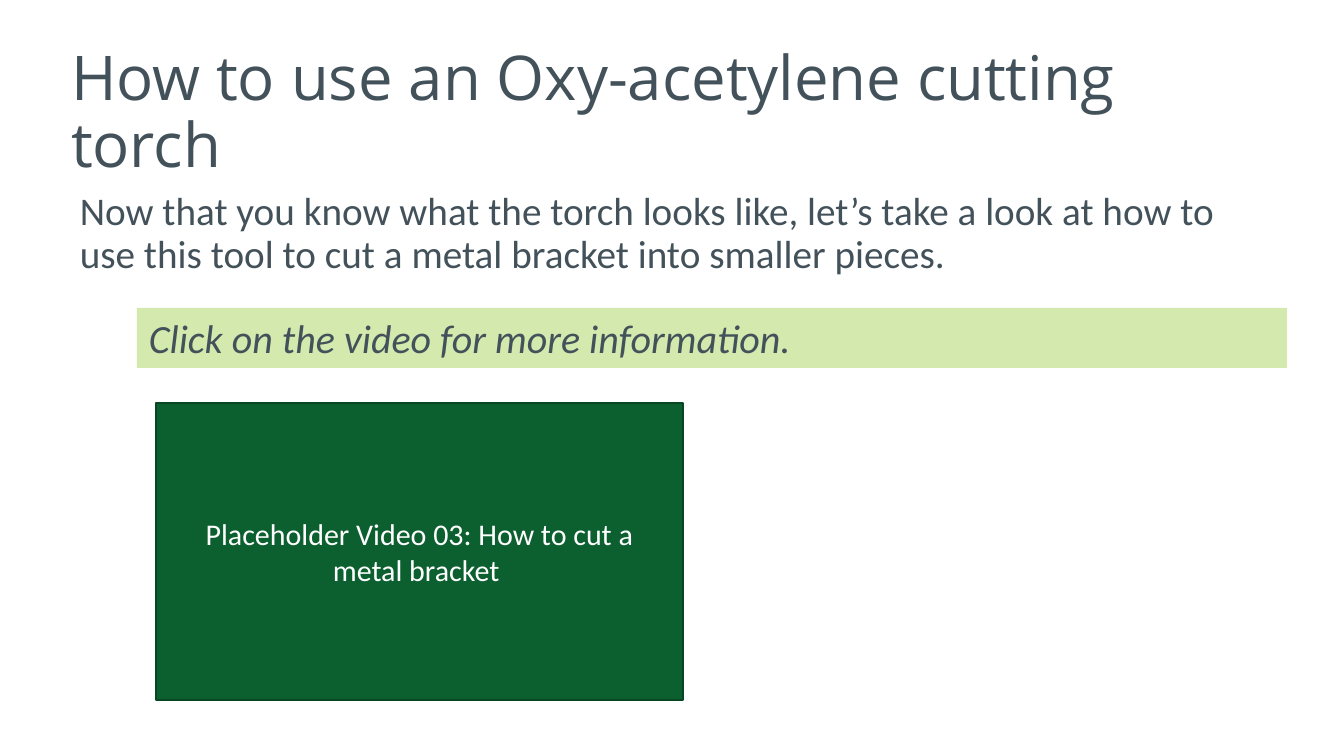
import pptx
import pptx.dml.color
import pptx.enum.shapes
import pptx.enum.text
import pptx.util

PX = pptx.util.Inches(1) // 120
SLATE = pptx.dml.color.RGBColor(0x43, 0x52, 0x5A)
LIME = pptx.dml.color.RGBColor(0xD3, 0xE9, 0xAD)
GREEN = pptx.dml.color.RGBColor(0x0C, 0x60, 0x30)
DARK_GREEN = pptx.dml.color.RGBColor(0x09, 0x47, 0x24)
WHITE = pptx.dml.color.RGBColor(0xFF, 0xFF, 0xFF)
LEFT = pptx.enum.text.PP_ALIGN.LEFT
CENTER = pptx.enum.text.PP_ALIGN.CENTER
TOP = pptx.enum.text.MSO_ANCHOR.TOP
MIDDLE = pptx.enum.text.MSO_ANCHOR.MIDDLE


class SlideBuilder:
    heading_font = "Open Sans"
    body_font = "Calibri"

    def __init__(self, deck):
        self.page = deck.slides.add_slide(deck.slide_layouts[5])

    def set_text(self, box, text, size, color=SLATE, font=body_font,
                 align=LEFT, anchor=TOP, spacing=1.0, italic=False):
        frame = box.text_frame
        frame.text = text
        frame.word_wrap = True
        frame.auto_size = pptx.enum.text.MSO_AUTO_SIZE.NONE
        frame.vertical_anchor = anchor
        para = frame.paragraphs[0]
        para.alignment = align
        para.line_spacing = spacing
        span = para.runs[0]
        span.font.name = font
        span.font.size = pptx.util.Pt(size)
        span.font.color.rgb = color
        span.font.italic = italic
        return para

    def title(self, text, left, top, width, height):
        box = self.page.shapes.title
        box.left, box.top = left * PX, top * PX
        box.width, box.height = width * PX, height * PX
        self.set_text(box, text, 37, font=self.heading_font,
                      anchor=MIDDLE, spacing=0.9)

    def body(self, text, left, top, width, height):
        box = self.page.shapes.add_textbox(
            left * PX, top * PX, width * PX, height * PX)
        para = self.set_text(box, text, 23.5, spacing=0.9)
        para.space_before = pptx.util.Pt(8.4)

    def panel(self, text, left, top, width, height, fill, size,
              line=None, **style):
        box = self.page.shapes.add_shape(
            pptx.enum.shapes.MSO_SHAPE.RECTANGLE,
            left * PX, top * PX, width * PX, height * PX)
        box.shadow.inherit = False
        box.fill.solid()
        box.fill.fore_color.rgb = fill
        if line is None:
            box.line.fill.background()
        else:
            box.line.color.rgb = line
            box.line.width = pptx.util.Pt(1)
        self.set_text(box, text, size, **style)


def main():
    deck = pptx.Presentation()
    deck.slide_width = 1344 * PX
    deck.slide_height = 756 * PX
    slide = SlideBuilder(deck)
    slide.title("How to use an Oxy-acetylene cutting torch", 59, 41, 1159, 146)
    slide.body("Now that you know what the torch looks like, let’s take a look "
               "at how to use this tool to cut a metal bracket into smaller "
               "pieces.", 68, 186, 1208, 124)
    slide.panel("Click on the video for more information.",
                137, 308, 1150, 60, LIME, 24, italic=True)
    slide.panel("Placeholder Video 03: How to cut a metal bracket ",
                156, 403, 527, 297, GREEN, 18, line=DARK_GREEN,
                color=WHITE, align=CENTER, anchor=MIDDLE)
    deck.save("out.pptx")


if __name__ == "__main__":
    main()
